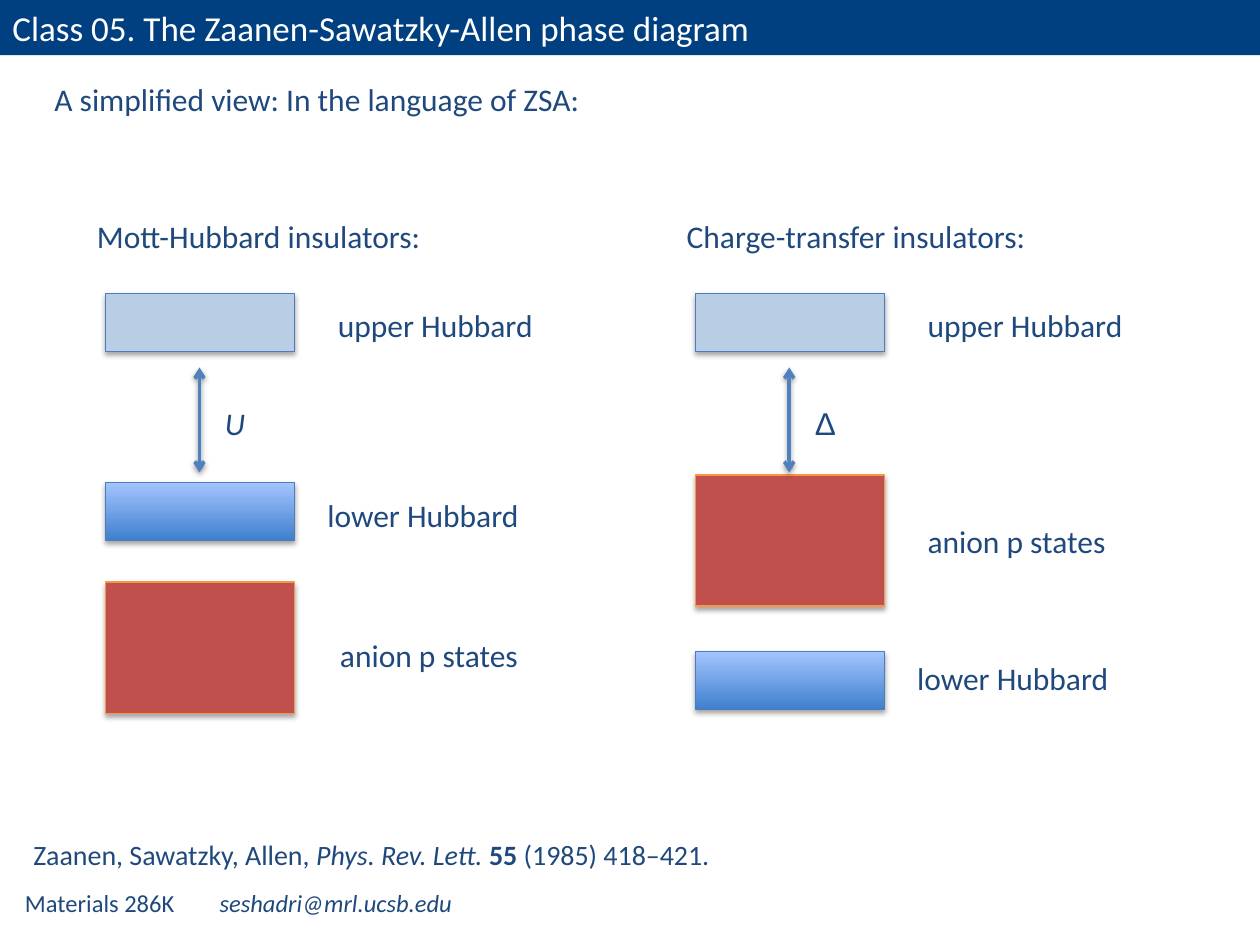
from lxml.etree import SubElement
from pptx import Presentation
from pptx.dml.color import RGBColor
from pptx.enum.shapes import MSO_CONNECTOR, MSO_SHAPE
from pptx.enum.text import MSO_ANCHOR, PP_ALIGN
from pptx.oxml.ns import qn
from pptx.util import Pt

THEME = {
    "font": "Calibri", "symbol_font": "Arial",
    "text": "1F497D", "title_text": "FFFFFF", "title_bar": "004080",
    "arrow": "4F81BD", "shadow": "000000",
    "title": 20, "body": 18, "reference": 16, "footer": 14,
}

# Content: runs are (text, style); styles are "", "i" or "b"
TITLE = "Class 05. The Zaanen-Sawatzky-Allen phase diagram"
INTRO = "A simplified view: In the language of ZSA:"
REFERENCE = [("Zaanen, Sawatzky, Allen, ", ""), ("Phys. Rev. Lett. ", "i"),
             ("55", "b"), (" (1985) 418–421.", "")]
FOOTER = [("Materials 286K\t ", ""), ("seshadri@mrl.ucsb.edu", "i")]

# Band kinds: height, fill (two colours make a gradient, bottom to top), line, label width
BANDS = {
    "upper Hubbard": (33, ["B9CDE5"], "4B7EBC", 131),
    "lower Hubbard": (33, ["3F80CE", "A4C4FF"], "4B7EBC", 129.5),
    "anion p states": (75, ["C0504D"], "F79646", 121.5),
}

# Columns; each band is (kind, top, label offset from the band's left, label top)
COLUMNS = [
    {"heading": "Mott-Hubbard insulators:", "width": 209,
     "gap": [("U", "i")], "gap_font": THEME["font"], "gap_width": 30,
     "bands": [("anion p states", 332.6, 126.7, 360),
               ("lower Hubbard", 275.8, 119.5, 280),
               ("upper Hubbard", 167.8, 125.5, 171.5)]},
    {"heading": "Charge-transfer insulators:", "width": 218,
     "gap": [("Δ", "")], "gap_font": THEME["symbol_font"], "gap_width": 26,
     "bands": [("anion p states", 271.4, 125.5, 294.5),
               ("lower Hubbard", 372.3, 119.5, 373),
               ("upper Hubbard", 167.8, 125.5, 171.5)]},
]
COLUMN_LEFT, COLUMN_STEP, BAND_WIDTH = 60.5, 337, 108
LABEL_HEIGHT = 29

prs = Presentation()
prs.slide_width, prs.slide_height = Pt(720), Pt(540)
s = prs.slides.add_slide(prs.slide_layouts[6])


def rgb(name):
    return RGBColor.from_string(name)


def write(sp, text, size=THEME["body"], color=THEME["text"], font=THEME["font"],
          wrap=True, anchor=MSO_ANCHOR.TOP, tab=None):
    tf = sp.text_frame
    tf.word_wrap = wrap
    tf.vertical_anchor = anchor
    p = tf.paragraphs[0]
    p.alignment = PP_ALIGN.LEFT
    if tab:
        tabs = SubElement(p._p.get_or_add_pPr(), qn("a:tabLst"))
        SubElement(tabs, qn("a:tab"), pos=str(Pt(tab)), algn="l")
    for words, style in [(text, "")] if isinstance(text, str) else text:
        r = p.add_run()
        r.text = words
        r.font.name, r.font.size = font, Pt(size)
        r.font.color.rgb = rgb(color)
        r.font.italic, r.font.bold = style == "i", style == "b"


def add_text(text, x, y, w, h=LABEL_HEIGHT, **style):
    write(s.shapes.add_textbox(Pt(x), Pt(y), Pt(w), Pt(h)), text, **style)


def add_shadow(sp, distance, opacity):
    spPr = sp._element.spPr
    effects = spPr.find(qn("a:effectLst"))
    if effects is None:
        effects = SubElement(spPr, qn("a:effectLst"))
    shadow = SubElement(effects, qn("a:outerShdw"), blurRad=str(Pt(3.1)),
                        dist=str(Pt(distance)), dir="5400000", rotWithShape="0")
    color = SubElement(shadow, qn("a:srgbClr"), val=THEME["shadow"])
    SubElement(color, qn("a:alpha"), val=str(opacity * 1000))


def add_rect(x, y, w, h, fill, line=None):
    sp = s.shapes.add_shape(MSO_SHAPE.RECTANGLE, Pt(x), Pt(y), Pt(w), Pt(h))
    sp.shadow.inherit = False
    if len(fill) == 1:
        sp.fill.solid()
        sp.fill.fore_color.rgb = rgb(fill[0])
    else:
        sp.fill.gradient()
        sp.fill.gradient_angle = 90
        for stop, position, color in zip(sp.fill.gradient_stops, (0, 1), fill):
            stop.position, stop.color.rgb = position, rgb(color)
    if line:
        sp.line.color.rgb, sp.line.width = rgb(line), Pt(0.75)
        add_shadow(sp, 1.8, 35)
    else:
        sp.line.fill.background()
    return sp


def add_gap_arrow(x, top, bottom):
    arrow = s.shapes.add_connector(MSO_CONNECTOR.STRAIGHT, Pt(x), Pt(top), Pt(x), Pt(bottom))
    arrow.line.color.rgb, arrow.line.width = rgb(THEME["arrow"]), Pt(2)
    for end in ("a:headEnd", "a:tailEnd"):
        SubElement(arrow.line._get_or_add_ln(), qn(end), type="arrow")
    add_shadow(arrow, 1.6, 38)


# Footer, title bar, introduction and reference
add_text(FOOTER, 7.2, 504, 312.5, 24.5, size=THEME["footer"], tab=108)
write(add_rect(0, 0, 720, 31.5, [THEME["title_bar"]]), TITLE, size=THEME["title"],
      color=THEME["title_text"], anchor=MSO_ANCHOR.MIDDLE)
add_text(INTRO, 24, 42, 672)
add_text(REFERENCE, 12, 475.2, 432, 26.5, size=THEME["reference"])

# Band diagrams
for i, column in enumerate(COLUMNS):
    left = COLUMN_LEFT + i * COLUMN_STEP
    add_text(column["heading"], left - 12.2, 120.2, column["width"], wrap=False)
    for kind, top, label_dx, label_top in column["bands"]:
        height, fill, line, label_width = BANDS[kind]
        add_rect(left, top, BAND_WIDTH, height, fill, line)
        add_text(kind, left + label_dx, label_top, label_width, wrap=False)
    add_gap_arrow(left + 53.5, 210, 270)
    add_text(column["gap"], left + 61, 227.5, column["gap_width"],
             font=column["gap_font"], wrap=False)

prs.save("out.pptx")
